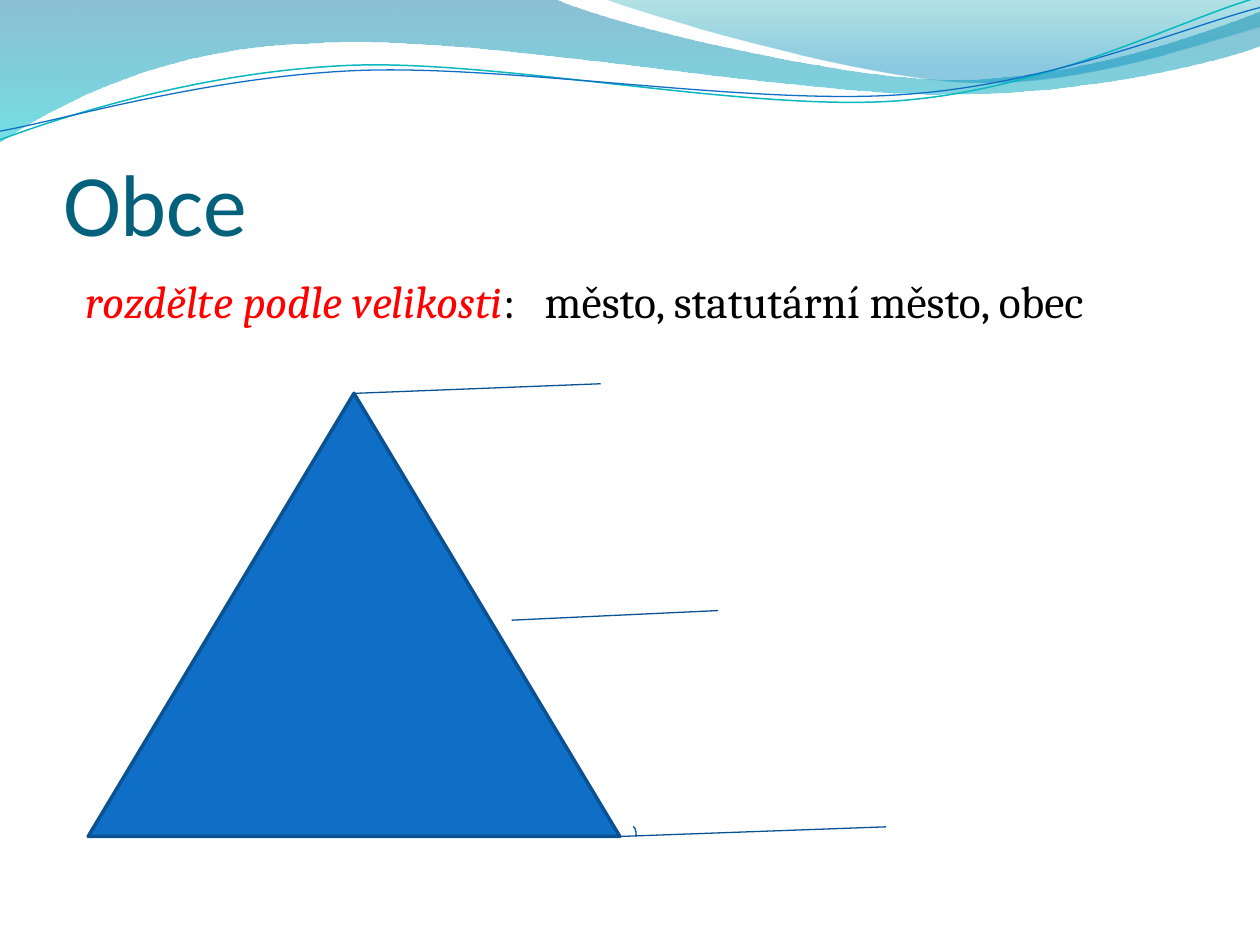
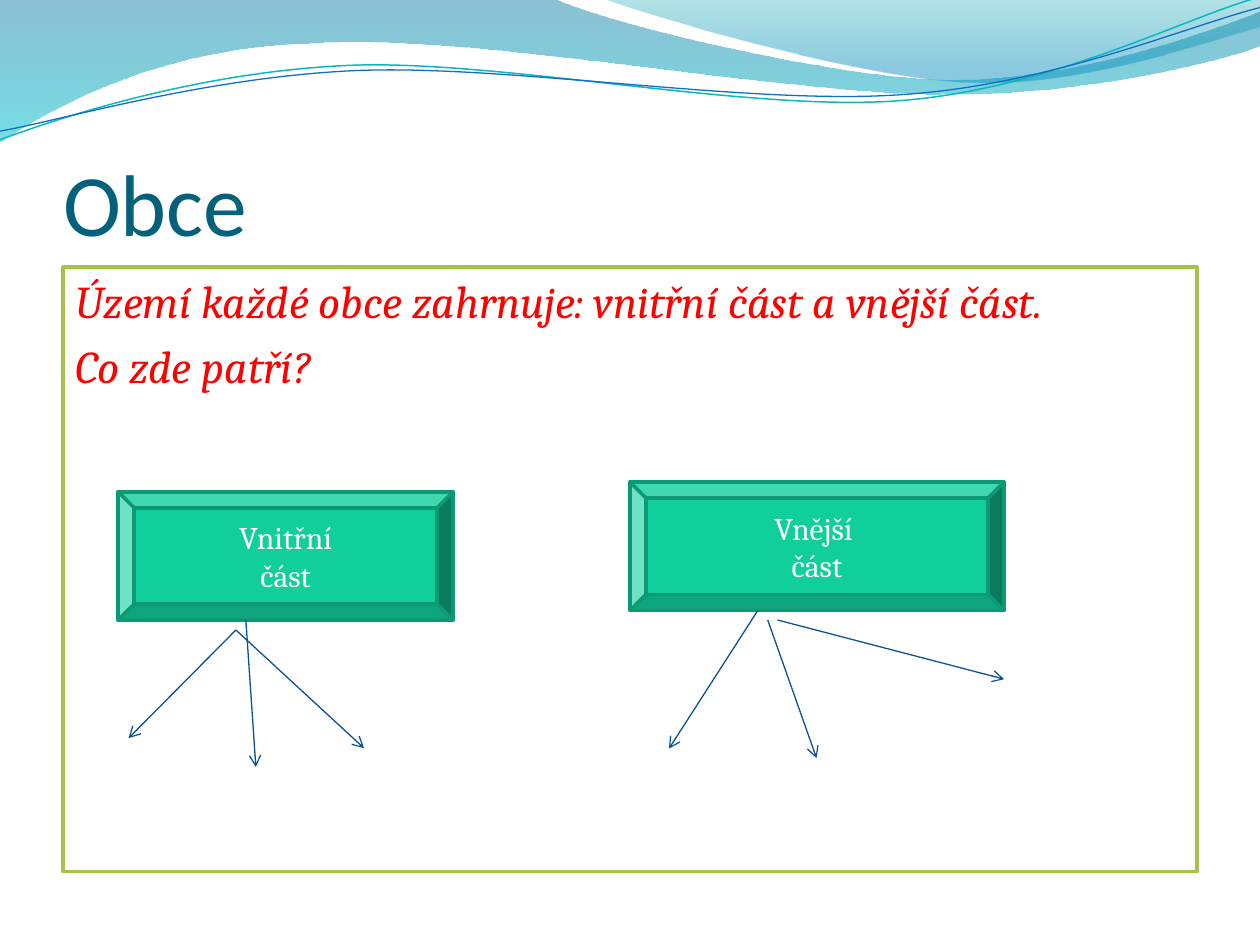
from dataclasses import dataclass

import lxml.etree
import pptx
import pptx.dml.color
import pptx.enum.shapes
import pptx.enum.text
import pptx.oxml.ns
import pptx.util

Pt = pptx.util.Pt
SHAPE = pptx.enum.shapes.MSO_SHAPE
ALIGN = pptx.enum.text.PP_ALIGN
ANCHOR = pptx.enum.text.MSO_ANCHOR


@dataclass(frozen=True)
class Theme:
    title: str = "04617B"
    text: str = "000000"
    accent_text: str = "FF0000"
    paper: str = "FFFFFF"
    blue: str = "0F6FC6"
    blue_edge: str = "0B5292"
    stroke: str = "095295"
    green: str = "10CF9B"
    green_edge: str = "0C9973"
    frame: str = "A5C249"
    teal: str = "0AB8BF"
    left_wave: tuple = ((0, "0074A1", 45), (1, "00C6CF", 55))
    right_wave: tuple = ((0, "00A1A9", 30), (0.8, "008BBF", 45))
    title_font: str = "Calibri"
    body_font: str = "Cambria"
    title_size: float = 50
    body_size: float = 26
    label_size: float = 18
    thin: float = 0.75
    medium: float = 0.85
    thick: float = 2


@dataclass(frozen=True)
class Box:
    x: float
    y: float
    w: float
    h: float

    def at(self, dx, dy):
        return self.x + dx, self.y + dy

    def emu(self):
        return [Pt(v) for v in (self.x, self.y, self.w, self.h)]


T = Theme()
TITLE = Box(36, 55.4, 648, 90)
BODY = Box(36, 152.6, 648, 345.6)

LEFT_WAVE = [
    (0, 0), (316.8, -0.7),
    (342.7, 12.2, 478.1, 45.4, 545.8, 45.4),
    (614.2, 45.4, 689.8, 18.7, 720, 6.5),
    (720.7, 25.9),
    (707.8, 31.7, 626.4, 54.7, 537.1, 54),
    (446.4, 54, 275, 20.2, 185, 24.5),
    (92.9, 25.9, 33.1, 59.8, -0.7, 81.4),
    (0, 0),
]
RIGHT_WAVE = [
    (344.9, -0.7),
    (366.5, 7.9, 491, 44.6, 553.7, 46.8),
    (616.3, 49.7, 691.9, 23, 720, 15.1),
    (720, 0),
    (344.9, -0.7),
]
TEAL_LINE = [
    (0, 79.9),
    (34.6, 67, 113.8, 41, 199.4, 37.4),
    (284.4, 33.8, 427, 64.1, 513.4, 57.6),
    (599.8, 51.1, 675.4, 10.8, 718.6, -1.4),
]
BLUE_LINE = [
    (0, 74.9),
    (33.8, 69.1, 118.1, 43.9, 203.8, 40.3),
    (290.2, 36.7, 429.8, 60.5, 516.2, 54),
    (601.9, 48.2, 677.5, 15.1, 720, 4.3),
]


def rgb(color):
    return pptx.dml.color.RGBColor.from_string(color)


def sub(parent, tag, **attrs):
    return lxml.etree.SubElement(parent, pptx.oxml.ns.qn(tag), attrs)


def paint(sp, fill=None, line=None, width=T.thin):
    sp.shadow.inherit = False
    if fill:
        sp.fill.solid()
        sp.fill.fore_color.rgb = rgb(fill)
    else:
        sp.fill.background()
    if line:
        sp.line.color.rgb = rgb(line)
        sp.line.width = Pt(width)
    else:
        sp.line.fill.background()


def style_run(r, size, font, color, italic=False):
    r.font.size = Pt(size)
    r.font.name = font
    r.font.color.rgb = rgb(color)
    r.font.italic = italic


def add_curve(s, outline, close):
    start, *ends = [(Pt(part[-2]), Pt(part[-1])) for part in outline]
    builder = s.shapes.build_freeform(*start)
    builder.add_line_segments(ends, close=close)
    sp = builder.convert_to_shape()
    for segment, part in zip(sp.element.xpath(".//a:lnTo"), outline[1:]):
        if len(part) == 6:
            segment.tag = pptx.oxml.ns.qn("a:cubicBezTo")
            segment.remove(segment[0])
            for x, y in zip(part[::2], part[1::2]):
                sub(segment, "a:pt", x=str(Pt(x) - sp.left), y=str(Pt(y) - sp.top))
    return sp


def add_wave(s, outline, stops):
    sp = add_curve(s, outline, True)
    paint(sp)
    sp.fill.gradient()
    sp.fill.gradient_angle = 270
    for stop, (position, color, _) in zip(sp.fill.gradient_stops, stops):
        stop.position = position
        stop.color.rgb = rgb(color)
    for clr, stop in zip(sp.element.xpath(".//a:gs/a:srgbClr"), stops):
        sub(clr, "a:alpha", val=str(stop[2] * 1000))
    return sp


def add_wave_line(s, outline, color, width):
    sp = add_curve(s, outline, False)
    paint(sp, line=color, width=width)
    return sp


def decorate_master(prs, s):
    waves = [
        add_wave(s, LEFT_WAVE, T.left_wave),
        add_wave(s, RIGHT_WAVE, T.right_wave),
        add_wave_line(s, TEAL_LINE, T.teal, T.medium),
        add_wave_line(s, BLUE_LINE, T.blue, T.thin),
    ]
    tree = prs.slide_master.shapes.element
    for i, sp in enumerate(waves):
        sp.element.xpath(".//p:cNvPr")[0].set("id", str(100 + i))
        tree.insert(2 + i, sp.element)


def add_title_slide(prs, title):
    s = prs.slides.add_slide(prs.slide_layouts[5])
    sp = s.shapes.title
    sp.left, sp.top, sp.width, sp.height = TITLE.emu()
    tf = sp.text_frame
    tf.text = title
    tf.auto_size = pptx.enum.text.MSO_AUTO_SIZE.NONE
    tf.vertical_anchor = ANCHOR.BOTTOM
    tf.margin_left = tf.margin_right = tf.margin_bottom = 0
    tf.margin_top = Pt(3.6)
    p = tf.paragraphs[0]
    p.alignment = ALIGN.LEFT
    style_run(p.runs[0], T.title_size, T.title_font, T.title)
    return s


def add_line(s, start, end, arrow=False):
    cn = s.shapes.add_connector(pptx.enum.shapes.MSO_CONNECTOR.STRAIGHT,
                                *[Pt(v) for v in (*start, *end)])
    cn.line.color.rgb = rgb(T.stroke)
    cn.line.width = Pt(T.thin)
    if arrow:
        sub(cn.element.xpath(".//a:ln")[0], "a:tailEnd", type="arrow")
    sub(cn.element.spPr, "a:effectLst")


def add_task(s, box):
    sp = s.shapes.add_textbox(*box.emu())
    tf = sp.text_frame
    tf.word_wrap = True
    tf.margin_left = Pt(13)
    p = tf.paragraphs[0]
    p.space_before = Pt(6)
    for text, color, italic in [
        ("rozdělte podle velikosti", T.accent_text, True),
        (":\tměsto, statutární město, obec", T.text, False),
    ]:
        r = p.add_run()
        r.text = text
        style_run(r, T.body_size, T.body_font, color, italic)
    tabs = sub(sp.element.xpath(".//a:pPr")[0], "a:tabLst")
    sub(tabs, "a:tab", pos=str(Pt(262.3)), algn="l")


def add_pyramid(s, box):
    sp = s.shapes.add_shape(SHAPE.ISOSCELES_TRIANGLE, *box.emu())
    paint(sp, T.blue, T.blue_edge, T.thick)
    for dx, dy, length in [(box.w / 2, 0, 141), (242, 129.6, 118),
                           (box.w, box.h, 152)]:
        x, y = box.at(dx, dy)
        add_line(s, (x, y), (x + length, y - 5.5))
    arc = Box(*box.at(box.w + 5.8, box.h - 5.7), 3.6, 11.5)
    paint(s.shapes.add_shape(SHAPE.ARC, *arc.emu()), line=T.stroke)


def add_framed_text(s, box, lines):
    sp = s.shapes.add_shape(SHAPE.RECTANGLE, *box.emu())
    paint(sp, T.paper, T.frame, T.thick)
    tf = sp.text_frame
    tf.text = "\n".join(lines)
    tf.vertical_anchor = ANCHOR.TOP
    for p in tf.paragraphs:
        p.alignment = ALIGN.LEFT
        p.space_before = Pt(5.6)
        style_run(p.runs[0], T.body_size, T.body_font, T.accent_text, True)


def add_part(s, box, lines, arrows):
    sp = s.shapes.add_shape(SHAPE.BEVEL, *box.emu())
    paint(sp, T.green, T.green_edge, T.thick)
    tf = sp.text_frame
    tf.text = "\n".join(lines)
    tf.vertical_anchor = ANCHOR.MIDDLE
    for p in tf.paragraphs:
        p.alignment = ALIGN.CENTER
        style_run(p.runs[0], T.label_size, T.body_font, T.paper)
    for start, end in arrows:
        add_line(s, box.at(*start), box.at(*end), arrow=True)


def build_size_slide(s):
    add_task(s, BODY)
    add_pyramid(s, Box(50.4, 224.8, 303.8, 253.2))


def build_territory_slide(s):
    add_framed_text(s, BODY, [
        "Území každé obce zahrnuje: vnitřní část a vnější část.",
        "Co zde patří?",
    ])
    add_part(s, Box(67.5, 281, 191.5, 73.4), ["Vnitřní", "část"], [
        ((67.3, 79), (6, 140.8)),
        ((73, 73.3), (78.7, 157.3)),
        ((67.3, 79), (140.5, 146.5)),
    ])
    add_part(s, Box(360, 275.5, 213.8, 73.4), ["Vnější ", "část"], [
        ((73.1, 73.3), (22.3, 152.3)),
        ((78.7, 78.8), (106.6, 157.7)),
        ((84.3, 78.8), (213.8, 112.6)),
    ])


def main():
    prs = pptx.Presentation()
    prs.slide_width, prs.slide_height = Pt(720), Pt(540)
    size_slide, territory_slide = [add_title_slide(prs, "Obce") for _ in range(2)]
    decorate_master(prs, size_slide)
    build_size_slide(size_slide)
    build_territory_slide(territory_slide)
    prs.save("out.pptx")


if __name__ == "__main__":
    main()
